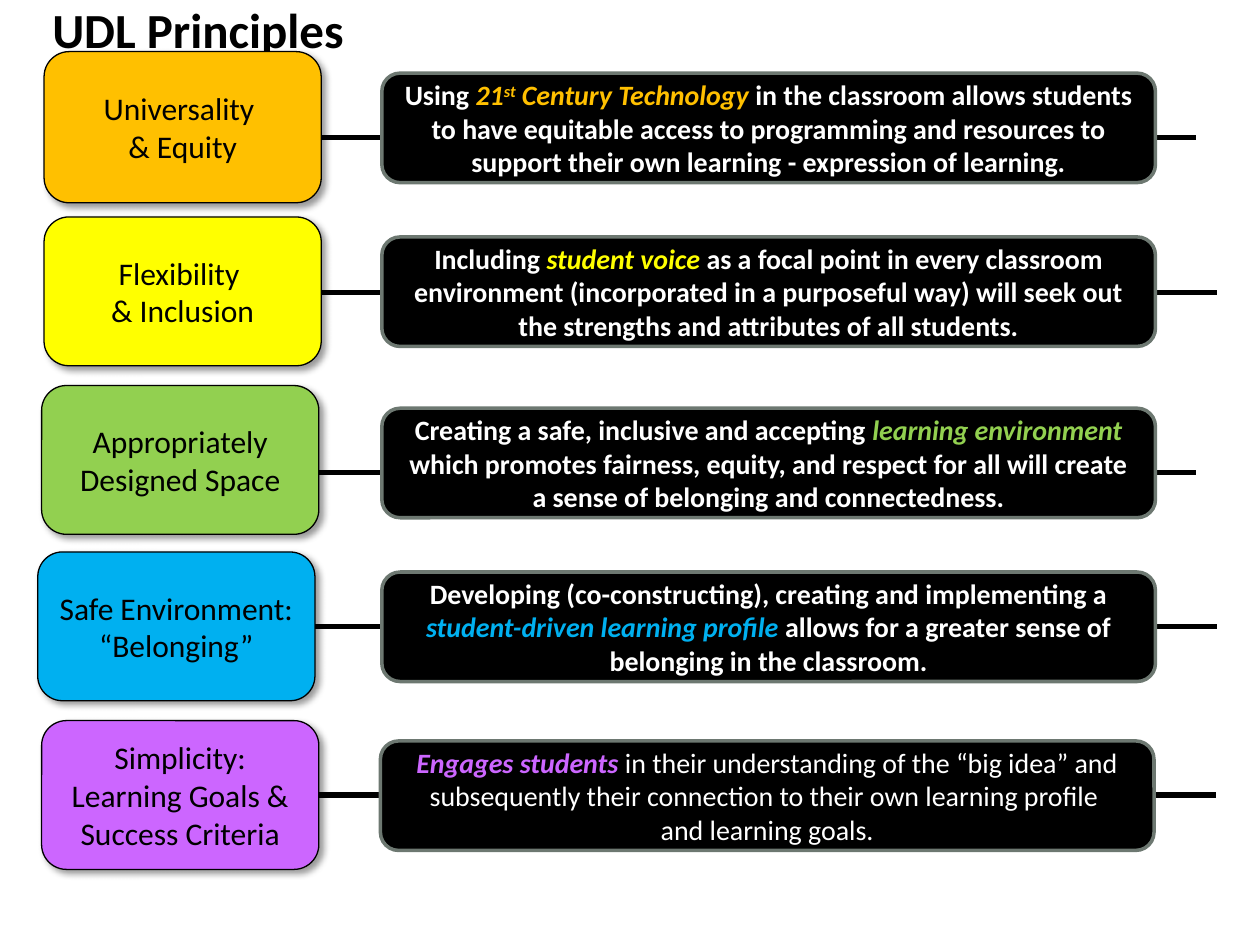
from lxml import etree
from pptx import Presentation
from pptx.dml.color import RGBColor
from pptx.enum.shapes import MSO_CONNECTOR, MSO_SHAPE
from pptx.enum.text import MSO_ANCHOR, PP_ALIGN
from pptx.oxml import parse_xml
from pptx.oxml.ns import nsdecls, qn
from pptx.util import Pt

ROUND = MSO_SHAPE.ROUNDED_RECTANGLE
LINE = MSO_CONNECTOR.STRAIGHT
MID = MSO_ANCHOR.MIDDLE
LEFT, MIDDLE = PP_ALIGN.LEFT, PP_ALIGN.CENTER

HUES = {
    "black": "000000", "white": "FFFFFF", "edge": "6D7871",
    "gold": "FFC000", "yellow": "FFFF00", "green": "92D050",
    "blue": "00B0F0", "purple": "CC66FF",
}

TITLE = "UDL Principles"
ROWS = [
    {"hue": "gold", "label": "Universality \n& Equity", "bold": True,
     "tag": (25.2, 29.5, 86.4), "note": (218.2, 41.8), "line": (25.2, 78.5),
     "runs": [("Using ", ""), ("21", "key"), ("st", "sup"),
              (" Century Technology ", "key"),
              ("in the classroom allows students to have equitable access to "
               "programming and resources to support their own learning - "
               "expression of learning.", "")]},
    {"hue": "yellow", "label": "Flexibility \n& Inclusion", "bold": True,
     "tag": (25.2, 124, 85), "note": (218.2, 135.4), "line": (37.4, 167),
     "runs": [("Including ", ""), ("student voice ", "key"),
              ("as a focal point in every classroom environment "
               "(incorporated in a purposeful way) will seek out the "
               "strengths and attributes of all students.", "")]},
    {"hue": "green", "label": "Appropriately Designed Space", "bold": True,
     "tag": (23.8, 220.3, 85), "note": (218.2, 233.3), "line": (25.2, 270),
     "runs": [("Creating a safe, inclusive and accepting ", ""),
              ("learning environment ", "key"),
              ("which promotes fairness, equity, and respect for all will "
               "create a sense of belonging and connectedness.", "")]},
    {"hue": "blue", "label": "Safe Environment: “Belonging”", "bold": True,
     "tag": (21.6, 315.4, 85), "note": (218.2, 326.9), "line": (37.4, 357.8),
     "runs": [("Developing (co-constructing), creating and implementing a ", ""),
              ("student-driven learning profile ", "key"),
              ("allows for a greater sense of belonging in the classroom.", "")]},
    {"hue": "purple", "label": "Simplicity: Learning Goals & Success Criteria",
     "bold": False,
     "tag": (23.8, 411.8, 85), "note": (217.4, 423.4), "line": (36.7, 454.3),
     "runs": [("Engages students ", "key"),
              ("in their understanding of the “big idea” and subsequently "
               "their connection to their own learning profile ", ""),
              ("\n", "break"), ("and learning goals.", "")]},
]
TAG_W, NOTE_W, NOTE_H, LINE_W = 158.4, 442.1, 62.6, 658.1

SHADOW = (
    f'<a:effectLst {nsdecls("a")}><a:outerShdw blurRad="50800" dist="38100" '
    'dir="2700000" algn="tl" rotWithShape="0"><a:srgbClr val="000000">'
    '<a:alpha val="40000"/></a:srgbClr></a:outerShdw></a:effectLst>'
)


def rgb(hue):
    return RGBColor.from_string(HUES[hue])


def add_box(slide, x, y, w, h, fill=None, edge=None, width=0):
    box = slide.shapes.add_shape(ROUND, Pt(x), Pt(y), Pt(w), Pt(h))
    box.shadow.inherit = False
    if fill:
        box.fill.solid()
        box.fill.fore_color.rgb = rgb(fill)
        box.line.color.rgb = rgb(edge)
        box.line.width = Pt(width)
    else:
        box.fill.background()
        box.line.fill.background()
    frame = box.text_frame
    frame.word_wrap = True
    frame.vertical_anchor = MID
    return box


def set_font(para, size, hue, bold, align):
    para.alignment = align
    font = para.font
    font.name, font.size, font.bold = "Calibri", Pt(size), bold
    font.color.rgb = rgb(hue)


def add_label(box, text, size, bold, align):
    frame = box.text_frame
    frame.margin_top = frame.margin_bottom = Pt(7.2)
    para = frame.paragraphs[0]
    para.text = text
    set_font(para, size, "black", bold, align)


def add_line(slide, x, y):
    line = slide.shapes.add_connector(LINE, Pt(x), Pt(y), Pt(x + LINE_W), Pt(y))
    line.line.color.rgb = rgb("black")
    line.line.width = Pt(3)
    etree.SubElement(line._element.spPr, qn("a:effectLst"))


def add_tag(slide, row):
    x, y, h = row["tag"]
    box = add_box(slide, x, y, TAG_W, h, row["hue"], "black", 0.75)
    props = box._element.spPr
    props.replace(props.find(qn("a:effectLst")), parse_xml(SHADOW))
    add_label(box, row["label"], 18, False, MIDDLE)


def add_note(slide, row):
    box = add_box(slide, *row["note"], NOTE_W, NOTE_H, "black", "edge", 2)
    para = box.text_frame.paragraphs[0]
    set_font(para, 16, "white", row["bold"], MIDDLE)
    for text, kind in row["runs"]:
        if kind == "break":
            para.add_line_break()
            continue
        run = para.add_run()
        run.text = text
        if kind:
            run.font.bold = run.font.italic = True
            run.font.color.rgb = rgb(row["hue"])
        if kind == "sup":
            run.font._element.set("baseline", "30000")


def main():
    deck = Presentation()
    deck.slide_width, deck.slide_height = Pt(720), Pt(540)
    slide = deck.slides.add_slide(deck.slide_layouts[6])
    for row in ROWS:
        add_line(slide, *row["line"])
    title = add_box(slide, 21.6, 3.6, 693.4, 25.9)
    add_label(title, TITLE, 28, True, LEFT)
    for row in ROWS:
        add_tag(slide, row)
        add_note(slide, row)
    deck.save("out.pptx")


if __name__ == "__main__":
    main()
